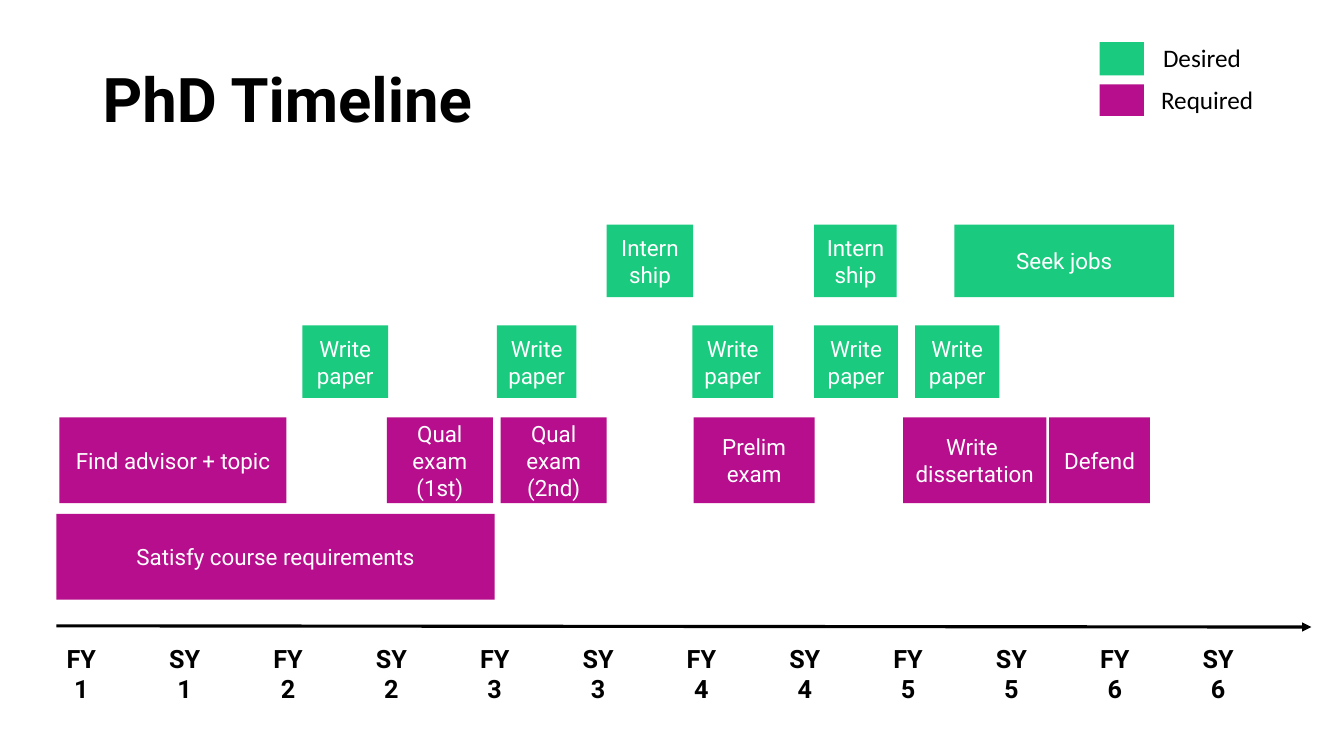
from collections import namedtuple

from lxml.etree import SubElement
from pptx import Presentation
from pptx.dml.color import RGBColor
from pptx.enum.shapes import MSO_CONNECTOR, MSO_SHAPE
from pptx.enum.text import MSO_ANCHOR, PP_ALIGN
from pptx.oxml.ns import qn
from pptx.util import Cm, Pt

GREEN = RGBColor(0x19, 0xCA, 0x7F)
PURPLE = RGBColor(0xB7, 0x0E, 0x8D)
BLACK = RGBColor(0, 0, 0)
WHITE = RGBColor(255, 255, 255)

Box = namedtuple("Box", "left top width height")

TITLE_FONT = {"name": "Roboto", "size": Pt(44), "bold": True}
BAR_FONT = {"name": "Roboto", "size": Pt(16)}
TERM_FONT = {"name": "Roboto", "size": Pt(18), "bold": True}
LEGEND_FONT = {"name": "Calibri", "size": Pt(18)}

ROWS = [
    (0, 1.83, GREEN, [
        (13.87, 2.18, "Internship"),
        (19.1, 2.08, "Internship"),
        (22.63, 5.54, "Seek jobs"),
    ]),
    (2.54, 1.83, GREEN, [
        (6.2, 2.16, "Write paper"),
        (11.1, 2.01, "Write paper"),
        (16.03, 2.03, "Write paper"),
        (19.1, 2.11, "Write paper"),
        (21.64, 2.13, "Write paper"),
    ]),
    (4.86, 2.16, PURPLE, [
        (0.08, 5.72, "Find advisor + topic"),
        (8.33, 2.67, "Qual exam\v(1st)"),
        (11.2, 2.67, "Qual exam\v(2nd)"),
        (16.06, 3.05, "Prelim exam"),
        (21.34, 3.61, "Write \vdissertation"),
        (25.02, 2.54, "Defend"),
    ]),
    (7.29, 2.16, PURPLE, [(0, 11.05, "Satisfy course requirements")]),
]


def in_cm(box):
    return [Cm(length) for length in box]


def write(frame, text, font, color, **paragraph_format):
    para = frame.paragraphs[0]
    for name, value in paragraph_format.items():
        setattr(para, name, value)
    span = para.add_run()
    para.text = text
    for span in para.runs:
        for name, value in font.items():
            setattr(span.font, name, value)
        span.font.color.rgb = color


def add_label(page, box, text, font, wrap=True, anchor=MSO_ANCHOR.TOP, inset=0.25, **paragraph_format):
    frame = page.shapes.add_textbox(*in_cm(box)).text_frame
    settings = {"word_wrap": wrap, "vertical_anchor": anchor,
                "margin_left": Cm(inset), "margin_right": Cm(inset)}
    for name, value in settings.items():
        setattr(frame, name, value)
    write(frame, text, font, BLACK, **paragraph_format)


def add_block(page, box, color):
    block = page.shapes.add_shape(MSO_SHAPE.RECTANGLE, *in_cm(box))
    block.shadow.inherit = False
    block.fill.solid()
    block.fill.fore_color.rgb = color
    block.line.fill.background()
    return block


def add_legend(page, box):
    entries = [("Desired", GREEN, 0.15, 0.84, 1.35), ("Required", PURPLE, 1.22, 0.79, 1.3)]
    for text, color, top, height, indent in entries:
        add_block(page, Box(box.left, box.top + top, 1.12, height), color)
        label_top = box.top + top + height / 2 - 0.53
        label = Box(box.left + indent, label_top, box.width - indent, 1.02)
        add_label(page, label, text, LEGEND_FONT, wrap=False)


def add_activities(page, box):
    for top, height, color, bars in ROWS:
        for left, width, text in bars:
            block = add_block(page, Box(box.left + left, box.top + top, width, height), color)
            frame = block.text_frame
            frame.word_wrap = True
            frame.vertical_anchor = MSO_ANCHOR.MIDDLE
            write(frame, text, BAR_FONT, WHITE, alignment=PP_ALIGN.CENTER)


def add_axis(page, box):
    arrow = page.shapes.add_connector(
        MSO_CONNECTOR.STRAIGHT, Cm(box.left), Cm(box.top),
        Cm(box.left + box.width), Cm(box.top + 0.03))
    arrow.line.width = Pt(2.25)
    arrow.line.color.rgb = BLACK
    SubElement(arrow.line._get_or_add_ln(), qn("a:tailEnd"), type="triangle")
    SubElement(arrow._element.spPr, qn("a:effectLst"))

    terms = [f"{season}{year}" for year in range(1, 7) for season in ("FY", "SY")]
    width = 1.6
    for index, term in enumerate(terms):
        left = box.left - 0.17 + index * 28.65 / (len(terms) - 1)
        add_label(page, Box(left, box.top + 0.31, width, box.height - 0.31), term,
                  TERM_FONT, inset=0.34, alignment=PP_ALIGN.CENTER)


def build_timeline(page, box):
    title = Box(box.left + 2.34, box.top + 0.74, 24, 3.68)
    add_label(page, title, "PhD Timeline", TITLE_FONT, anchor=MSO_ANCHOR.MIDDLE, line_spacing=0.9)
    add_legend(page, Box(box.left + 27.71, box.top + 0.91, 4.2, 2.1))
    add_activities(page, Box(box.left + 1.42, box.top + 5.66, 28.17, 9.45))
    add_axis(page, Box(box.left + 1.42, box.top + 15.77, 31.63, 2.3))


def main():
    deck = Presentation()
    deck.slide_width, deck.slide_height = Cm(33.87), Cm(19.05)
    page = deck.slides.add_slide(deck.slide_layouts[6])
    build_timeline(page, Box(0, 0, 33.87, 19.05))
    deck.save("out.pptx")


if __name__ == "__main__":
    main()
